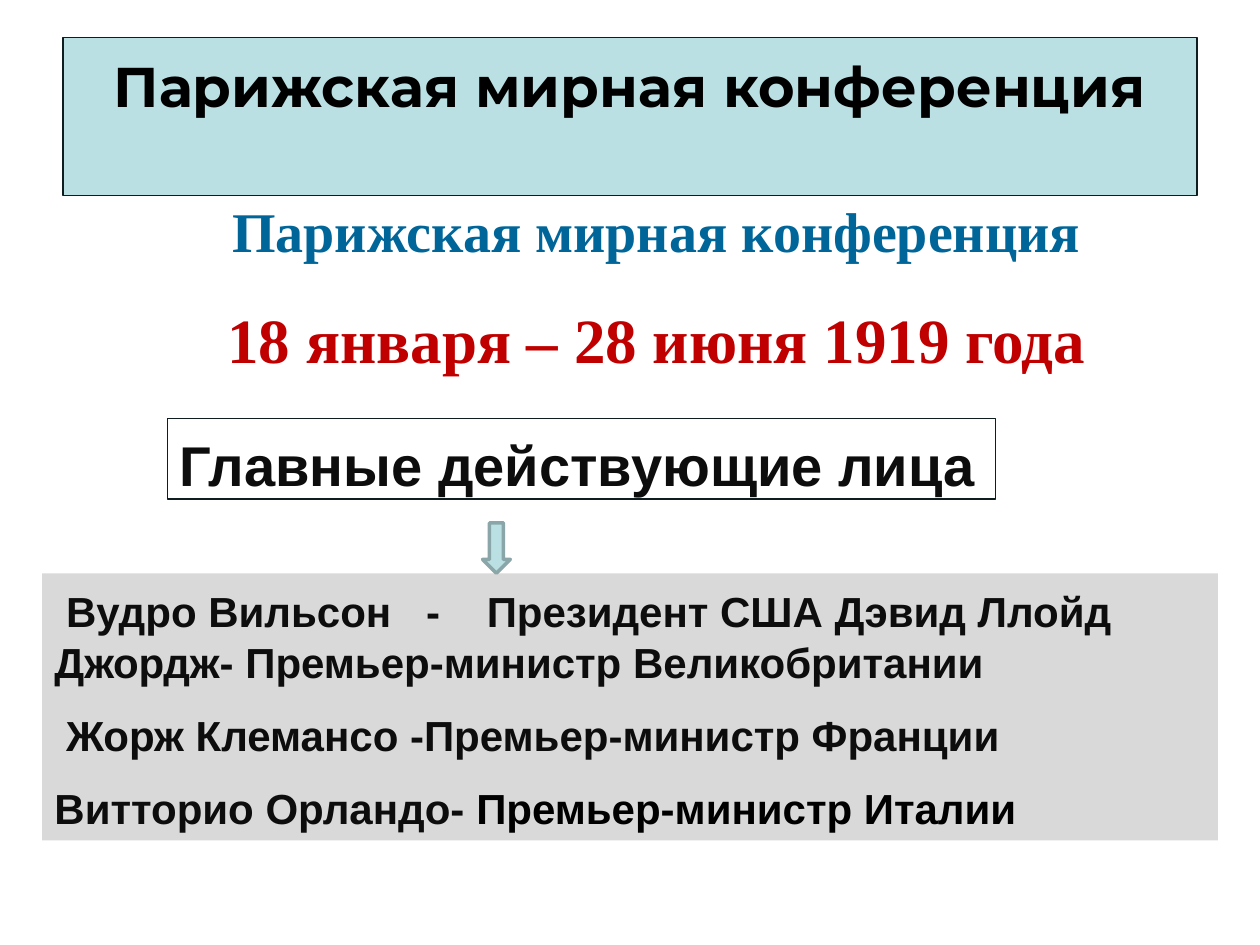
"""Build a slide on the Paris Peace Conference and its main participants."""
from pptx import Presentation
from pptx import util as u
from pptx.dml.color import RGBColor
from pptx.enum import shapes, text

WIDTH, HEIGHT = 10, 7.5
THEME = {
    "pale": "BBE0E3", "edge": "0E1E20", "arrow_edge": "8AA6A8", "panel": "D9D9D9",
    "blue": "006699", "red": "C00000", "ink": "0D0D0D", "black": "000000",
    "title": 32, "date": 36, "body": 24,
    "display": "Montserrat", "serif": "Times New Roman", "sans": "Arial",
}

TITLE = [[("Парижская мирная конференция", "black")]]
EVENT = [
    [("Парижская мирная конференция", "blue")],
    [("18 января – 28 июня 1919 года", "red", "date")],
]
CAPTION = [[("Главные действующие лица", "ink")]]
LEADERS = [
    [(" Вудро Вильсон   -    Президент США Дэвид Ллойд Джордж- "
      "Премьер-министр Великобритании", "ink")],
    [(" Жорж Клемансо -Премьер-министр Франции", "ink")],
    [("Витторио Орландо- ", "ink"), ("Премьер-министр Италии", "black")],
]


def place(shape, left, top, width, height):
    box = {"left": left, "top": top, "width": width, "height": height}
    for name, value in box.items():
        setattr(shape, name, u.Inches(value))


def paint(shape, fill=None, line=None, weight=0.75):
    if fill:
        shape.fill.solid()
        shape.fill.fore_color.rgb = RGBColor.from_string(THEME[fill])
    else:
        shape.fill.background()
    if line:
        shape.line.color.rgb = RGBColor.from_string(THEME[line])
        shape.line.width = u.Pt(weight)
    else:
        shape.line.fill.background()


def write(shape, paragraphs, font, size, align="LEFT", gap=0, **frame_format):
    frame = shape.text_frame
    defaults = {
        "word_wrap": True, "auto_size": text.MSO_AUTO_SIZE.NONE,
        "vertical_anchor": text.MSO_ANCHOR.TOP, "margin_top": u.Inches(0.1),
    }
    for name, value in {**defaults, **frame_format}.items():
        setattr(frame, name, value)
    for index, runs in enumerate(paragraphs):
        paragraph = frame.add_paragraph() if index else frame.paragraphs[0]
        paragraph.alignment = getattr(text.PP_ALIGN, align)
        paragraph.space_before = u.Pt(gap if index else 0)
        for content, color, *own_size in runs:
            run = paragraph.add_run()
            run.text = content
            run.font.color.rgb = RGBColor.from_string(THEME[color])
            run_size = THEME[own_size[0] if own_size else size]
            font_format = {"name": THEME[font], "size": u.Pt(run_size), "bold": True}
            for name, value in font_format.items():
                setattr(run.font, name, value)


def add_preset(slide, preset, box, **colors):
    shape = slide.shapes.add_shape(preset, 0, 0, 0, 0)
    shape.shadow.inherit = False
    place(shape, *box)
    paint(shape, **colors)
    return shape


def main():
    presentation = Presentation()
    presentation.slide_width = u.Inches(WIDTH)
    presentation.slide_height = u.Inches(HEIGHT)
    slide = presentation.slides.add_slide(presentation.slide_layouts[5])
    preset = shapes.MSO_SHAPE

    event = slide.shapes.add_textbox(0, 0, 0, 0)
    place(event, 0, 1.46, 10.42, 1.55)
    write(event, EVENT, "serif", "title", "CENTER", gap=21)

    panel_width = WIDTH * 14 / 15
    panel_box = ((WIDTH - panel_width) / 2, 4.55, panel_width, 2.12)
    leaders = add_preset(slide, preset.RECTANGLE, panel_box, fill="panel")
    write(leaders, LEADERS, "sans", "body", gap=13)

    title = slide.shapes.title
    place(title, WIDTH * 0.05, HEIGHT * 0.04, WIDTH * 0.9, HEIGHT / 6)
    paint(title, fill="pale", line="edge")
    write(title, TITLE, "display", "title", "CENTER",
          vertical_anchor=text.MSO_ANCHOR.MIDDLE,
          margin_top=u.Inches(0.05), margin_bottom=u.Inches(0.55))

    caption = add_preset(slide, preset.RECTANGLE, (1.33, 3.32, 6.57, 0.64), line="edge")
    write(caption, CAPTION, "sans", "title", margin_right=0)

    add_preset(slide, preset.DOWN_ARROW, (3.83, 4.15, 0.22, 0.4),
               fill="pale", line="arrow_edge", weight=2)
    presentation.save("out.pptx")


if __name__ == "__main__":
    main()
